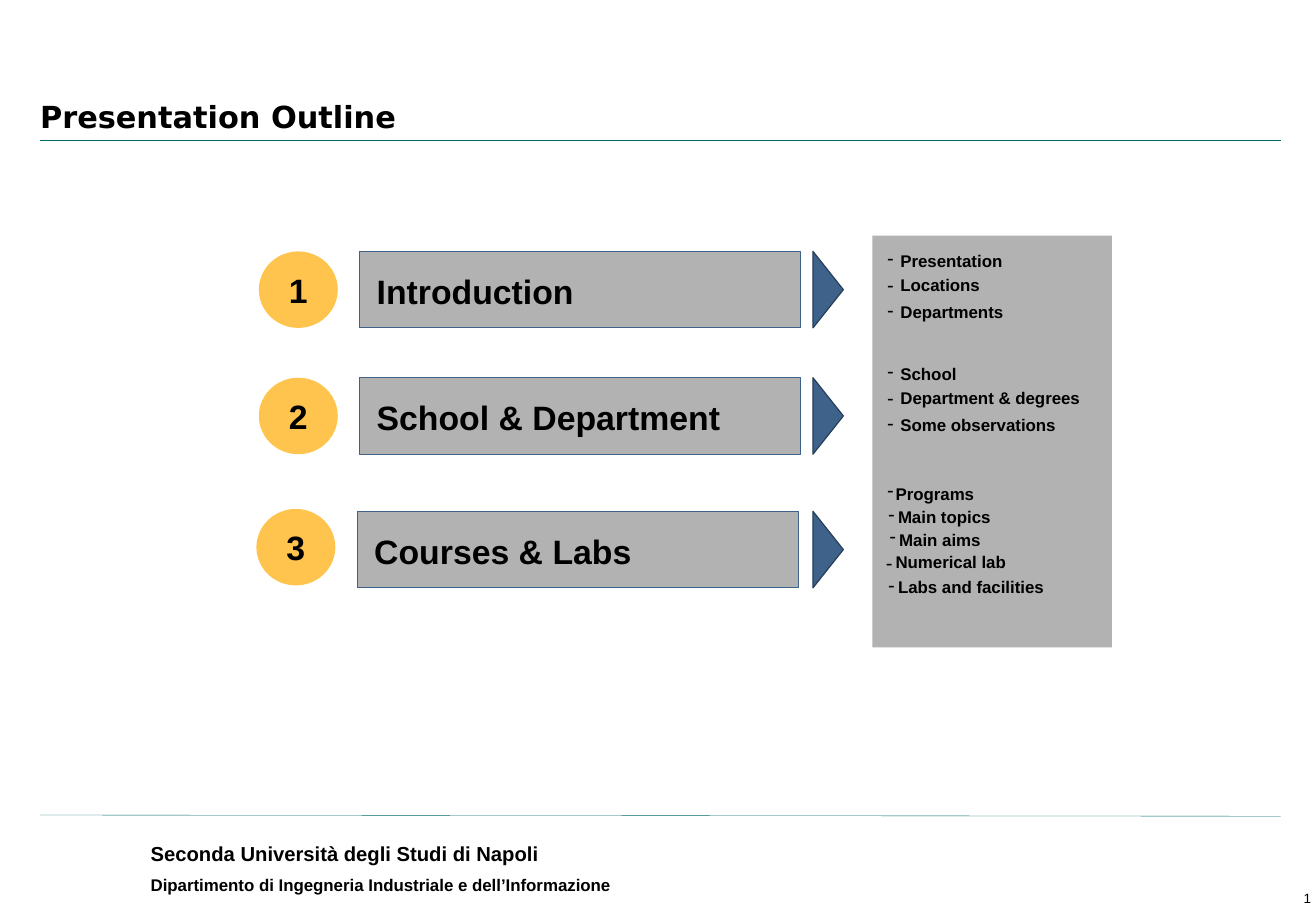
import pptx
import pptx.util
import pptx.dml.color
import pptx.enum.shapes
import pptx.enum.text
import lxml.etree

SHAPE = pptx.enum.shapes.MSO_SHAPE
ALIGN = pptx.enum.text.PP_ALIGN
ANCHOR = pptx.enum.text.MSO_ANCHOR
THEME = {
    "font": "Arial", "title_font": "DejaVu Sans",
    "text": "000000", "panel": "B2B2B2", "number": "FFC44D",
    "arrow": "3E628A", "arrow_edge": "28405A", "rule": "006666",
    "title": 18, "heading": 20, "dash": 12, "topic": 10,
    "university": 12, "department": 10, "page": 8,
    "edge": 0.75, "rule_width": 0.2,
}

deck = pptx.Presentation()
cell = pptx.util.Inches(0.1)
deck.slide_width, deck.slide_height = int(108.3 * cell), 75 * cell
slide = deck.slides.add_slide(deck.slide_layouts[6])


def add_text(text, column, row, columns, rows, size, bold=True, font="font",
             align=ALIGN.LEFT, wrap=True, anchor=ANCHOR.TOP, holder=None):
    box = holder or slide.shapes.add_textbox(
        *(int(n * cell) for n in (column, row, columns, rows)))
    frame = box.text_frame
    if holder is None:
        frame.margin_left = frame.margin_right = 0
        frame.margin_top = frame.margin_bottom = 0
        frame.auto_size = pptx.enum.text.MSO_AUTO_SIZE.SHAPE_TO_FIT_TEXT
    frame.word_wrap = wrap
    frame.vertical_anchor = anchor
    frame.text = text
    paragraph = frame.paragraphs[0]
    paragraph.alignment = align
    run_font = paragraph.runs[0].font
    run_font.name = THEME[font]
    run_font.size = pptx.util.Pt(THEME[size])
    run_font.bold = bold
    run_font.color.rgb = pptx.dml.color.RGBColor.from_string(THEME["text"])


def add_block(kind, column, row, columns, rows, fill, edge=None):
    block = slide.shapes.add_shape(
        kind, *(int(n * cell) for n in (column, row, columns, rows)))
    block.shadow.inherit = False
    block.fill.solid()
    block.fill.fore_color.rgb = pptx.dml.color.RGBColor.from_string(THEME[fill])
    if edge:
        block.line.color.rgb = pptx.dml.color.RGBColor.from_string(THEME[edge])
        block.line.width = pptx.util.Pt(THEME["edge"])
    else:
        block.line.fill.background()
    return block


add_text("1", 106.4, 73.3, 1.5, 1.3, "page", bold=False, align=ALIGN.RIGHT, wrap=False)

for start_row, end_row in ((11.5, 11.5), (67.1, 67.2)):
    rule = slide.shapes.add_connector(
        pptx.enum.shapes.MSO_CONNECTOR.STRAIGHT,
        *(int(n * cell) for n in (3.3, start_row, 105.4, end_row)))
    rule.line.color.rgb = pptx.dml.color.RGBColor.from_string(THEME["rule"])
    rule.line.width = pptx.util.Pt(THEME["rule_width"])
    lxml.etree.SubElement(
        rule._element.spPr, pptx.oxml.ns.qn("a:effectLst"))

add_text("Seconda Università degli Studi di Napoli", 12.4, 69.3, 53.9, 2, "university")
add_text("Dipartimento di Ingegneria Industriale e dell’Informazione",
         12.4, 72, 55.4, 1.7, "department")
add_block(SHAPE.RECTANGLE, 71.8, 19.4, 19.7, 33.9, "panel")
add_text("Presentation Outline", 3.3, 8.1, 88.3, 3, "title",
         font="title_font", anchor=ANCHOR.BOTTOM)

sections = [
    ("Introduction", 29.6, 20.7, 20.7, [
        ("Presentation", 73, 20.2, 74.1, 20.6),
        ("Locations", 73, 22.4, 74.1, 22.6),
        ("Departments", 73, 24.5, 74.1, 24.8)]),
    ("School & Department", 29.6, 31.1, 31.1, [
        ("School", 73, 29.5, 74.1, 29.9),
        ("Department & degrees", 73, 31.7, 74.1, 31.9),
        ("Some observations", 73, 33.8, 74.1, 34.1)]),
    ("Courses & Labs", 29.4, 42.1, 41.9, [
        ("Programs", 73, 39.3, 73.7, 39.8),
        ("Main topics", 73.1, 41.3, 73.9, 41.7),
        ("Main aims", 73.2, 43.1, 74, 43.6),
        ("Numerical lab", 72.9, 45.3, 73.7, 45.4),
        ("Labs and facilities", 73.1, 47.1, 73.9, 47.5)]),
]
for number, (heading, column, row, number_row, topics) in enumerate(sections, 1):
    add_block(SHAPE.RECTANGLE, column, row, 36.3, 6.3, "panel", "arrow")
    disc = add_block(SHAPE.OVAL, column - 8.3, number_row, 6.5, 6.3, "number")
    add_text(str(number), 0, 0, 0, 0, "heading", align=ALIGN.CENTER,
             wrap=False, anchor=ANCHOR.MIDDLE, holder=disc)
    add_text(heading, column + 1.4, row + 1.6, 33.6, 3.4, "heading")
    arrow = add_block(SHAPE.PENTAGON, 66.9, row, 2.5, 6.3, "arrow", "arrow_edge")
    arrow.adjustments[0] = 1
    for topic, dash_column, dash_row, topic_column, topic_row in topics:
        add_text("-", dash_column, dash_row, 0.6, 2, "dash", bold=False, wrap=False)
        add_text(topic, topic_column, topic_row, 15.9, 1.7, "topic")

deck.save("out.pptx")
